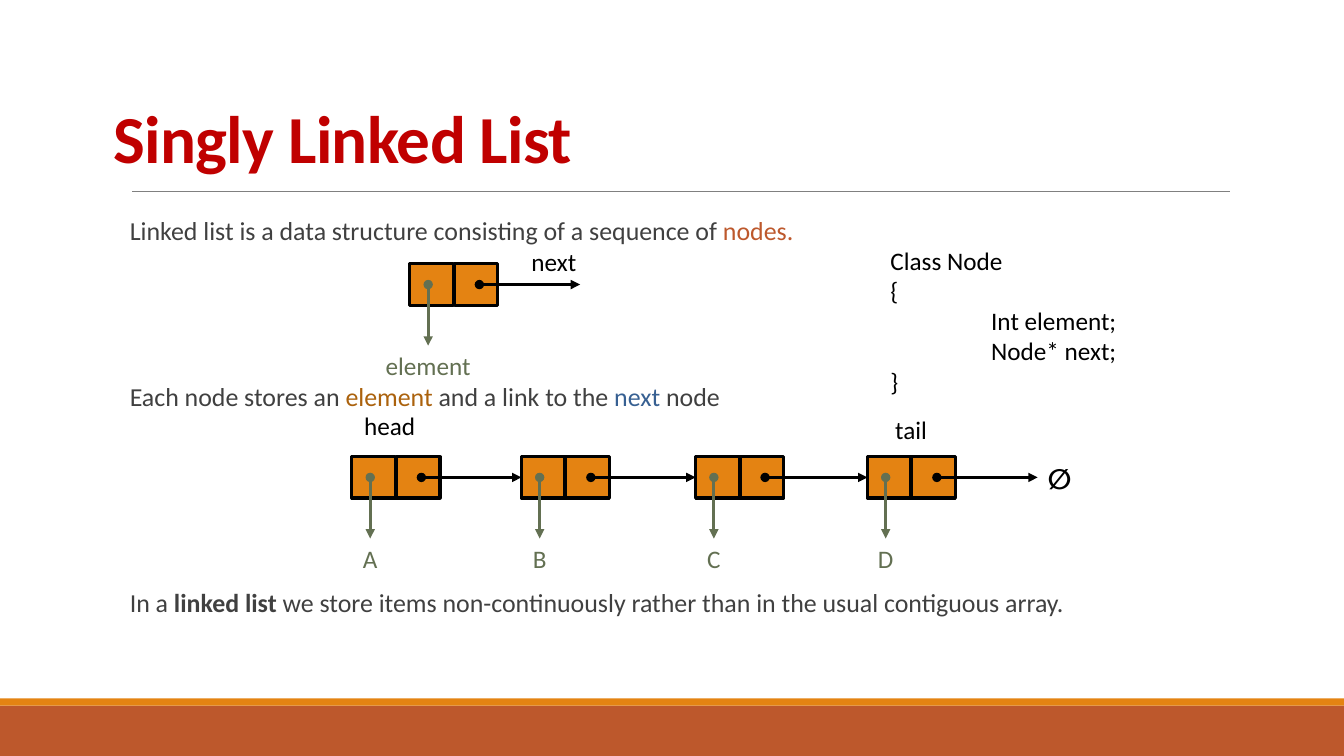
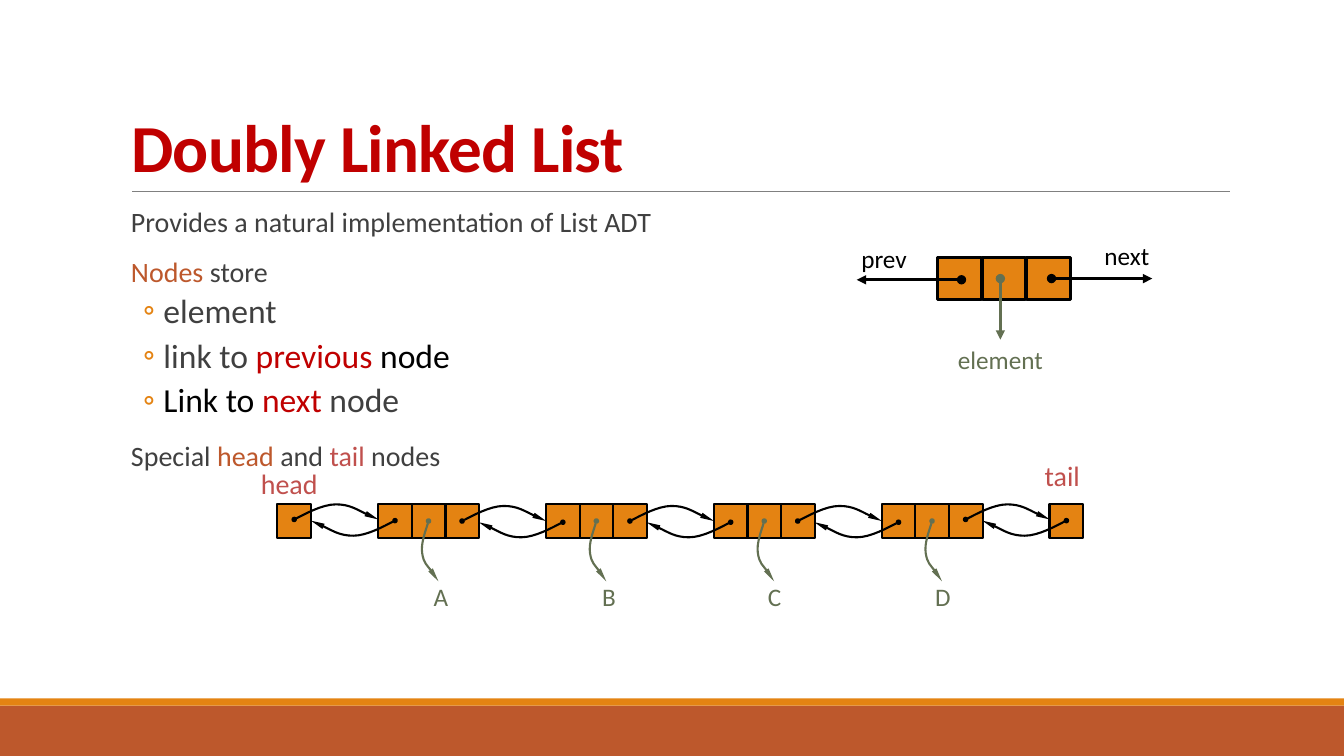
from lxml.etree import SubElement
from pptx import Presentation
from pptx.dml.color import RGBColor
from pptx.enum.shapes import MSO_CONNECTOR, MSO_SHAPE
from pptx.enum.text import MSO_ANCHOR, MSO_AUTO_SIZE, PP_ALIGN
from pptx.oxml.ns import qn
from pptx.util import Cm, Pt

FONT = "Calibri"
BLACK, GREY, RED = "000000", "404040", "C00000"
ORANGE, RUST, GREEN, ROSE = "E48312", "BD582C", "637052", "C0504D"
CELL_WIDTH, CELL_HEIGHT, CELL_PITCH = 1.1, 1.04, 1.12
CELL_MIDDLE = CELL_HEIGHT / 2
SMALL_CELL, NODE_PITCH = 0.85, 4.23
TOP, LEFT_SIDE = 0, 1

# Joined cubic curves, as offsets in cm from the starting dot
LINK_CURVE = [(0.17, -0.08), (0.7, -0.38), (1.05, -0.38),
              (1.4, -0.38), (1.9, -0.08), (2.12, 0)]
BACK_CURVE = [(-x, -y) for x, y in LINK_CURVE]
ELEMENT_CURVE = [(-0.03, 0.13), (-0.2, 0.56), (-0.16, 0.81),
                 (-0.12, 1.07), (0.18, 1.37), (0.25, 1.52)]


def color(hex_value):
    return RGBColor.from_string(hex_value)


def set_values(target, values):
    for name, value in values.items():
        setattr(target, name, value)


def place(shape, left, top, width, height):
    set_values(shape, {"left": Cm(left), "top": Cm(top),
                       "width": Cm(width), "height": Cm(height)})


def add_span(para, text, size, hex_value, bold=False):
    span = para.add_run()
    span.text = text
    set_values(span.font, {"name": FONT, "size": Pt(size), "bold": bold})
    span.font.color.rgb = color(hex_value)
    return span


def set_line(shape, hex_value, weight):
    shape.line.color.rgb = color(hex_value)
    shape.line.width = Pt(weight)


def add_ends(shape, width="med", length="med"):
    """Start the line with a dot and end it with an arrowhead."""
    outline = shape.element.spPr.find(qn("a:ln"))
    SubElement(outline, qn("a:headEnd"), type="oval", w=width, len=width)
    SubElement(outline, qn("a:tailEnd"), type="triangle", w=width, len=length)


def add_rectangle(slide, left, top, width, height, fill, weight=None):
    box = slide.shapes.add_shape(MSO_SHAPE.RECTANGLE, Cm(left), Cm(top), Cm(width), Cm(height))
    box.shadow.inherit = False
    box.fill.solid()
    box.fill.fore_color.rgb = color(fill)
    if weight:
        set_line(box, BLACK, weight)
    else:
        box.line.fill.background()
    return box


def add_line(slide, start, end, hex_value, weight):
    line = slide.shapes.add_connector(MSO_CONNECTOR.STRAIGHT, *map(Cm, start + end))
    set_line(line, hex_value, weight)
    SubElement(line.element.spPr, qn("a:effectLst"))
    return line


def add_pointer(slide, start, end, hex_value=BLACK):
    pointer = add_line(slide, start, end, hex_value, 2.25)
    add_ends(pointer)
    return pointer


def add_text_box(slide, left, top, width, height):
    box = slide.shapes.add_textbox(Cm(left), Cm(top), Cm(width), Cm(height))
    set_values(box.text_frame, {"word_wrap": True, "auto_size": MSO_AUTO_SIZE.NONE})
    return box


def add_label(slide, text, center, top, hex_value=BLACK, size=18, bold=False, width=3.1):
    box = add_text_box(slide, center - width / 2, top, width, CELL_HEIGHT)
    para = box.text_frame.paragraphs[0]
    para.alignment = PP_ALIGN.CENTER
    add_span(para, text, size, hex_value, bold)
    return box


def add_node(slide, left, top, label, count=2):
    """Draw a node whose last cell but one points down to its element."""
    cells = [add_rectangle(slide, left + CELL_PITCH * column, top,
                           CELL_WIDTH, CELL_HEIGHT, ORANGE, 2.25)
             for column in range(count)]
    center = left + CELL_PITCH * (count - 2) + 0.46
    text = add_label(slide, label, center, top + 2.06, GREEN)
    pointer = add_pointer(slide, (center, top + CELL_MIDDLE), (center, top + 2.06), GREEN)
    pointer.end_connect(text, TOP)
    return cells


def add_next(slide, left, top, count=2):
    """Draw the link that leaves a node's last cell."""
    start = left + CELL_PITCH * (count - 1) + 0.63
    middle = top + CELL_MIDDLE
    return add_pointer(slide, (start, middle), (start + 2.54, middle))


def bend(curve):
    """Turn each three straight segments of the outline into one cubic curve."""
    segments = curve.element.xpath(".//a:lnTo")
    outline = segments[0].getparent()
    for first in range(0, len(segments), 3):
        cubic = SubElement(outline, qn("a:cubicBezTo"))
        for segment in segments[first:first + 3]:
            cubic.append(segment[0])
            outline.remove(segment)


def add_curve(slide, left, top, offsets, hex_value=BLACK):
    builder = slide.shapes.build_freeform(Cm(left), Cm(top))
    builder.add_line_segments([(Cm(left + x), Cm(top + y)) for x, y in offsets], close=False)
    curve = builder.convert_to_shape()
    bend(curve)
    curve.shadow.inherit = False
    curve.fill.background()
    set_line(curve, hex_value, 1.5)
    add_ends(curve, "sm", "lg")


def move_frame_to_layout(slide, layout):
    """Draw the bands and the rule once, on the layout both slides use."""
    frame = [add_rectangle(slide, 0, 17.78, 33.87, 1.27, RUST),
             add_rectangle(slide, 0, 17.6, 33.87, 0.18, ORANGE),
             add_line(slide, (3.33, 4.83), (31, 4.83), "808080", 0.5)]
    for number, shape in enumerate(frame, 101):
        shape.element.xpath(".//p:cNvPr")[0].set("id", str(number))
        layout.shapes.element.append(shape.element)


def fill_title(slide, text, left, top):
    title = slide.shapes.title
    place(title, left, top, 27.94, 4.04)
    set_values(title.text_frame, {"vertical_anchor": MSO_ANCHOR.BOTTOM, "word_wrap": True,
                                  "auto_size": MSO_AUTO_SIZE.NONE})
    para = title.text_frame.paragraphs[0]
    set_values(para, {"alignment": PP_ALIGN.LEFT, "line_spacing": 0.85})
    span = add_span(para, text, 48, RED, True)
    span._r.get_or_add_rPr().set("spc", "-50")


def set_bullet(para, level):
    properties = para._p.get_or_add_pPr()
    margin, indent = (1.07, -0.51) if level else (0.25, 0)
    properties.set("marL", str(Cm(margin)))
    properties.set("indent", str(Cm(indent)))
    if level:
        bullet_color = SubElement(properties, qn("a:buClr"))
        SubElement(bullet_color, qn("a:srgbClr"), val=ORANGE)
        SubElement(properties, qn("a:buFont"), typeface=FONT, pitchFamily="34", charset="0")
        SubElement(properties, qn("a:buChar"), char="◦")
    else:
        SubElement(properties, qn("a:buNone"))


def fill_body(slide, left, top, line_spacing, items):
    """Write items of (level, size, points before, spans) into the body."""
    body = slide.placeholders[1]
    place(body, left, top, 27.94, 11.18)
    frame = body.text_frame
    set_values(frame, {"margin_left": 0, "margin_right": 0, "word_wrap": True,
                       "vertical_anchor": MSO_ANCHOR.TOP, "auto_size": MSO_AUTO_SIZE.NONE})
    for index, (level, size, before, spans) in enumerate(items):
        para = frame.add_paragraph() if index else frame.paragraphs[0]
        set_values(para, {"level": level, "line_spacing": line_spacing,
                          "space_before": Pt(before), "space_after": Pt(4 if level else 2),
                          "alignment": PP_ALIGN.LEFT})
        set_bullet(para, level)
        for text, *style in spans:
            add_span(para, text, size, *style)


def add_code(slide):
    frame = add_text_box(slide, 22.19, 6.05, 6.65, 4.11).text_frame
    lines = [("Class Node", 0), ("{", 0), ("Int element;", 2.54), ("Node* next;", 2.54), ("}", 0)]
    for index, (text, margin) in enumerate(lines):
        para = frame.add_paragraph() if index else frame.paragraphs[0]
        para._p.get_or_add_pPr().set("marL", str(Cm(margin)))
        add_span(para, text, 18, BLACK)


def build_singly(slide):
    fill_title(slide, "Singly Linked List", 2.61, 0.56)
    fill_body(slide, 3.02, 5.49, 0.7, [
        (0, 18.5, 12, [("Linked list is a data structure consisting of a sequence of ", GREY),
                       ("nodes.", RUST)]),
        (0, 18.5, 101, [("Each node stores an ", GREY), ("element", "AB620D"),
                        (" and a link to the ", GREY), ("next", "376092"), (" node", GREY)]),
        (0, 18.5, 130, [("In a ", GREY), ("linked list ", GREY, True),
                        ("we store items non-continuously rather than in the usual "
                         "contiguous array.", GREY)]),
    ])
    add_node(slide, 10.33, 6.65, "element")
    add_next(slide, 10.33, 6.65)
    add_label(slide, "next", 13.96, 6.07)
    add_code(slide)

    top = 11.51
    lefts = [8.87, 13.14, 17.53, 21.86]
    nodes = [add_node(slide, left, top, letter) for left, letter in zip(lefts, "ABCD")]
    null = add_label(slide, "∅", 26.7, top, size=20, bold=True, width=1.1)
    targets = [node[0] for node in nodes[1:]] + [null]
    for left, target in zip(lefts, targets):
        add_next(slide, left, top).end_connect(target, LEFT_SIDE)
    add_label(slide, "head", 9.82, 10.21)
    add_label(slide, "tail", 22.96, 10.31)


def build_doubly(slide):
    fill_title(slide, "Doubly Linked List", 3.05, 0.79)
    fill_body(slide, 3.05, 5.13, 0.9, [
        (0, 20, 12, [("Provides a natural implementation of List ADT", GREY)]),
        (0, 20, 12, [("Nodes", RUST), (" store", GREY)]),
        (1, 24, 2, [("element", GREY)]),
        (1, 24, 2, [("link to ", GREY), ("previous ", RED), ("node", BLACK)]),
        (1, 24, 2, [("Link to ", BLACK), ("next", RED), (" node", GREY)]),
        (0, 20, 12, [("Special ", GREY), ("head ", RUST), ("and ", GREY),
                     ("tail ", ROSE), ("nodes", GREY)]),
    ])
    add_node(slide, 23.63, 6.5, "element", 3)
    add_next(slide, 23.63, 6.5, 3)
    add_pointer(slide, (24.23, 7.05), (21.59, 7.05))
    add_label(slide, "next", 28.4, 5.94)
    add_label(slide, "prev", 22.28, 6)

    head, top = 6.99, 12.7
    first = head + 2.54
    tail = first + 4 * NODE_PITCH
    lefts = [first + NODE_PITCH * index for index in range(4)]
    cells = [left + SMALL_CELL * column for left in lefts for column in range(3)]
    for left in [head, *cells, tail]:
        add_rectangle(slide, left, top, SMALL_CELL, SMALL_CELL, ORANGE, 1.5)
    for index in range(5):
        start = head + SMALL_CELL / 2 + NODE_PITCH * index
        lift = 0.04 if index in (0, 4) else 0
        add_curve(slide, start, top + 0.43 - lift, LINK_CURVE)
        add_curve(slide, start + 2.54, top + 0.46 - lift, BACK_CURVE)
    for left, letter, center in zip(lefts, "ABCD", [11.11, 15.35, 19.52, 23.76]):
        add_curve(slide, left + 1.27, top + 0.43, ELEMENT_CURVE, GREEN)
        add_label(slide, letter, center, 14.53, GREEN)
    add_label(slide, "head", 7.29, 11.63, ROSE, 20)
    add_label(slide, "tail", 26.77, 11.43, ROSE, 20)


def main():
    deck = Presentation()
    set_values(deck, {"slide_width": Cm(33.87), "slide_height": Cm(19.05)})
    layout = deck.slide_layouts[1]
    pages = [deck.slides.add_slide(layout) for _ in range(2)]
    move_frame_to_layout(pages[0], layout)
    build_singly(pages[0])
    build_doubly(pages[1])
    deck.save("out.pptx")


if __name__ == "__main__":
    main()
